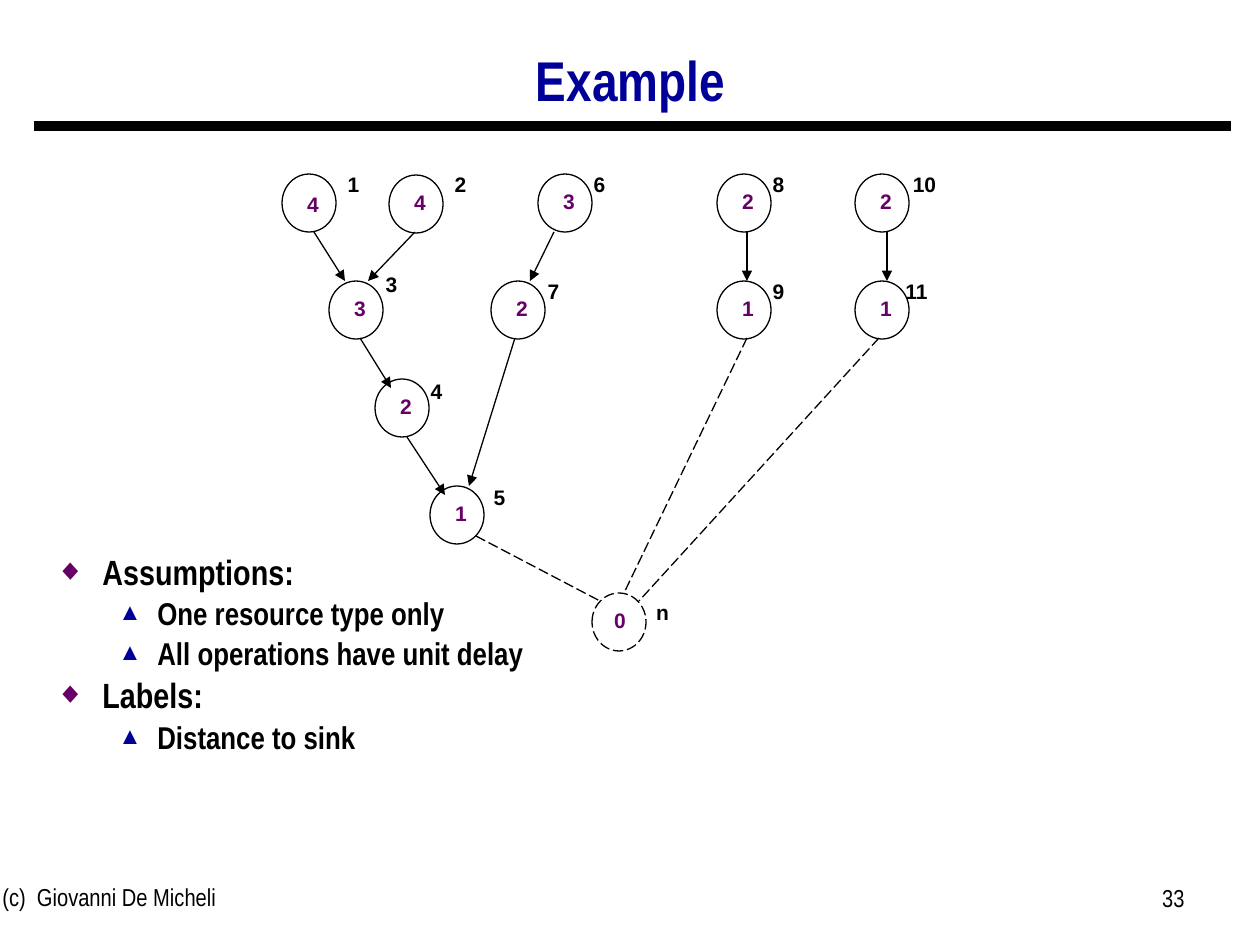
from dataclasses import dataclass

from lxml.etree import SubElement
from pptx import Presentation
from pptx.dml.color import RGBColor
from pptx.enum.dml import MSO_LINE_DASH_STYLE as Dash
from pptx.enum.shapes import MSO_CONNECTOR as Connector, MSO_SHAPE as Shape
from pptx.enum.text import MSO_ANCHOR as Anchor, MSO_AUTO_SIZE as AutoSize, PP_ALIGN as Align
from pptx.oxml.ns import qn
from pptx.util import Emu, Pt

PX_PER_INCH = 126
NODE_W, NODE_H = 54, 58
VALUE_W, LABEL_W, TEXT_H = 62, 77, 38


@dataclass(frozen=True)
class Theme:
    ink: str = "000000"
    blue: str = "000099"
    purple: str = "660066"
    narrow: str = "Arial Narrow"
    sans: str = "Arial"
    title: int = 32
    body: int = 20
    sub: int = 18
    footer: int = 14
    label: int = 12
    thin: float = 0.75
    thick: float = 6


@dataclass(frozen=True)
class Node:
    name: str
    value: str
    x: int
    y: int
    label_x: int
    label_y: int
    value_dx: int = 0
    value_dy: int = 8
    dashed: bool = False


@dataclass(frozen=True)
class Edge:
    x1: int
    y1: int
    x2: int
    y2: int
    dashed: bool = False


@dataclass(frozen=True)
class Bullet:
    mark: str
    color: str
    percent: int
    size: int
    margin: int
    hang: int


T = Theme()
MAIN = Bullet("◆", T.purple, 85, T.body, 47, 47)
SUB = Bullet("▲", T.blue, 75, T.sub, 102, 39)

NODES = [
    Node("1", "4", 282, 174, 315, 165, value_dy=11),
    Node("2", "4", 389, 175, 422, 165),
    Node("3", "3", 329, 281, 353, 265),
    Node("4", "2", 375, 379, 398, 372),
    Node("5", "1", 430, 486, 461, 478),
    Node("6", "3", 538, 174, 561, 165),
    Node("7", "2", 491, 281, 515, 272),
    Node("8", "2", 717, 174, 740, 165),
    Node("9", "1", 717, 281, 740, 272),
    Node("10", "2", 855, 174, 886, 165),
    Node("11", "1", 855, 281, 878, 272),
    Node("n", "0", 592, 593, 624, 593, value_dx=-3, dashed=True),
]

EDGES = [
    Edge(314, 232, 345, 281),
    Edge(415, 232, 368, 281),
    Edge(554, 232, 530, 281),
    Edge(747, 232, 747, 281),
    Edge(887, 232, 887, 281),
    Edge(360, 338, 391, 388),
    Edge(407, 437, 445, 495),
    Edge(515, 338, 469, 486),
    Edge(476, 536, 600, 601, dashed=True),
    Edge(747, 338, 624, 593, dashed=True),
    Edge(879, 338, 639, 601, dashed=True),
]

POINTS = [
    (MAIN, "Assumptions:"),
    (SUB, "One resource type only"),
    (SUB, "All operations have unit delay"),
    (MAIN, "Labels:"),
    (SUB, "Distance to sink"),
]


def px(n: int) -> Emu:
    return Emu(round(n * 914400 / PX_PER_INCH))


def place(sp, x: int, y: int, w: int, h: int) -> None:
    sp.left, sp.top, sp.width, sp.height = px(x), px(y), px(w), px(h)


def write(p, text: str, *, size: int, color: str = T.ink, font: str = T.narrow,
          bold: bool = True, align: Align = Align.LEFT) -> None:
    p.alignment = align
    r = p.add_run()
    r.text = text
    r.font.name, r.font.size, r.font.bold = font, Pt(size), bold
    r.font.color.rgb = RGBColor.from_string(color)


def add_text(s, x: int, y: int, w: int, h: int, text: str, **fmt) -> None:
    tf = s.shapes.add_textbox(px(x), px(y), px(w), px(h)).text_frame
    tf.word_wrap = True
    write(tf.paragraphs[0], text, **fmt)


def style_line(line, width: float, dashed: bool = False) -> None:
    line.color.rgb = RGBColor.from_string(T.ink)
    line.width = Pt(width)
    if dashed:
        line.dash_style = Dash.LONG_DASH


def add_line(s, e: Edge, width: float = T.thin, arrow: bool = False) -> None:
    c = s.shapes.add_connector(Connector.STRAIGHT, px(e.x1), px(e.y1), px(e.x2), px(e.y2))
    style_line(c.line, width, e.dashed)
    if arrow:
        SubElement(c.line._get_or_add_ln(), qn("a:tailEnd"), type="triangle")
    SubElement(c._element.spPr, qn("a:effectLst"))


def add_node(s, n: Node) -> None:
    sp = s.shapes.add_shape(Shape.OVAL, px(n.x), px(n.y), px(NODE_W), px(NODE_H))
    sp.shadow.inherit = False
    sp.fill.background()
    style_line(sp.line, T.thin, n.dashed)
    fmt = dict(size=T.label, font=T.sans, align=Align.CENTER)
    add_text(s, n.x + n.value_dx, n.y + n.value_dy, VALUE_W, TEXT_H, n.value,
             color=T.purple, **fmt)
    add_text(s, n.label_x, n.label_y, LABEL_W, TEXT_H, n.name, **fmt)


def set_bullet(p, b: Bullet) -> None:
    pPr = p._p.get_or_add_pPr()
    pPr.set("marL", str(px(b.margin)))
    pPr.set("indent", str(-px(b.hang)))
    SubElement(SubElement(pPr, qn("a:buClr")), qn("a:srgbClr"), val=b.color)
    SubElement(pPr, qn("a:buSzPct"), val=str(b.percent * 1000))
    SubElement(pPr, qn("a:buFont"), typeface=T.sans)
    SubElement(pPr, qn("a:buChar"), char=b.mark)


def add_points(s) -> None:
    tf = s.shapes.add_textbox(px(43), px(552), px(1198), px(219)).text_frame
    tf.word_wrap = True
    for i, (b, text) in enumerate(POINTS):
        p = tf.add_paragraph() if i else tf.paragraphs[0]
        p.line_spacing = 0.8
        if i:
            p.space_before = Pt(0.3 * b.size)
        set_bullet(p, b)
        write(p, text, size=b.size)


def set_title(s) -> None:
    sp = s.shapes.title
    place(sp, 95, 33, 1071, 100)
    tf = sp.text_frame
    tf.auto_size, tf.vertical_anchor = AutoSize.NONE, Anchor.MIDDLE
    p = tf.paragraphs[0]
    p.line_spacing = 0.9
    write(p, "Example", size=T.title, color=T.blue, align=Align.CENTER)


def main() -> None:
    prs = Presentation()
    prs.slide_width, prs.slide_height = px(1260), px(945)
    s = prs.slides.add_slide(prs.slide_layouts[5])

    # Title, rule and footer
    set_title(s)
    add_line(s, Edge(34, 126, 1231, 126), T.thick)
    add_text(s, -10, 876, 399, 66, "(c)  Giovanni De Micheli", size=T.footer, bold=False)
    add_text(s, 903, 877, 294, 66, "33", size=T.footer, bold=False, align=Align.RIGHT)

    # Assumptions and labels
    add_points(s)

    # Sequencing graph; dashed edges lead to the sink
    for n in NODES:
        add_node(s, n)
    for e in EDGES:
        add_line(s, e, arrow=not e.dashed)

    prs.save("out.pptx")


if __name__ == "__main__":
    main()
